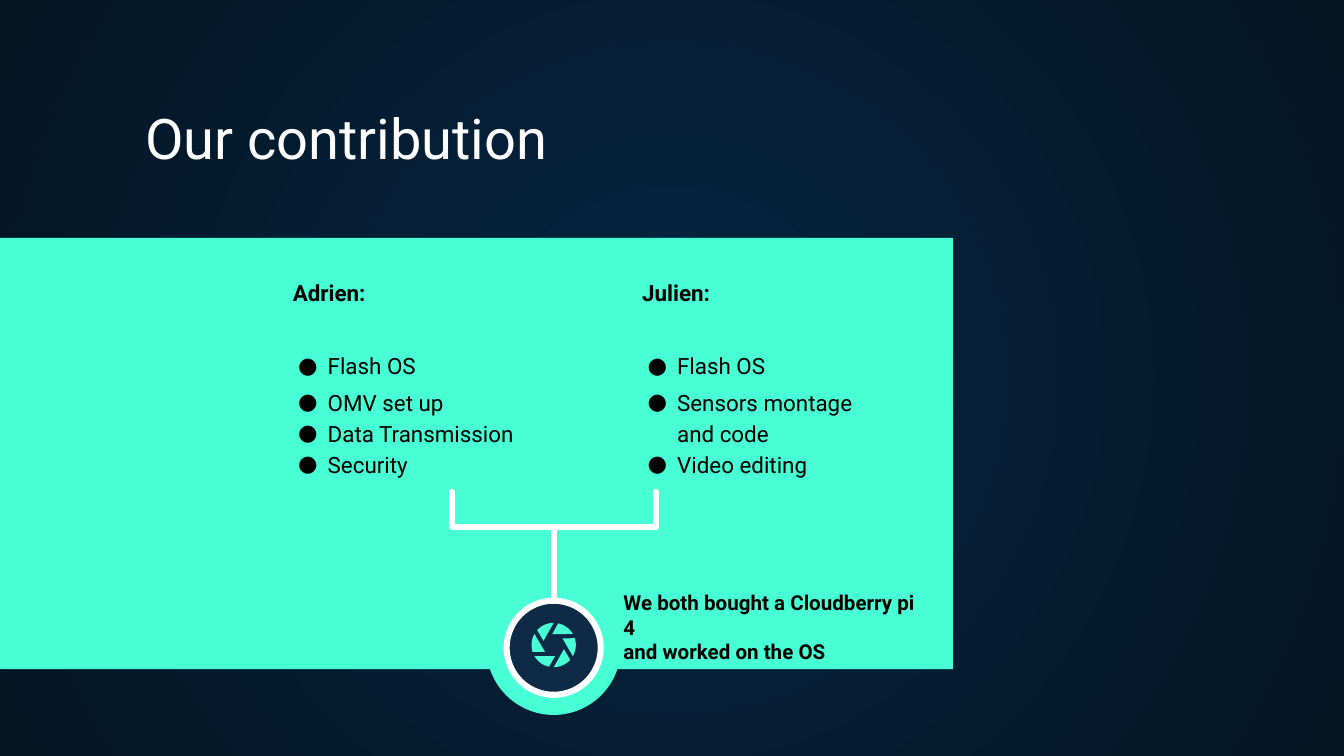
import math

import pptx
import pptx.dml.color
import pptx.enum.shapes
import pptx.enum.text
import pptx.oxml
import pptx.oxml.ns
import pptx.util
from pptx.util import Inches, Pt

RGBColor = pptx.dml.color.RGBColor
Shape = pptx.enum.shapes.MSO_SHAPE
Anchor = pptx.enum.text.MSO_ANCHOR
qn = pptx.oxml.ns.qn

# Content
TITLE = "Our contribution"
CONTRIBUTORS = [
    ("Adrien:", ["Flash OS", "OMV set up", "Data Transmission", "Security"]),
    ("Julien:", ["Flash OS", "Sensors montage and code", "Video editing"]),
]
SHARED_WORK = ["We both bought a Cloudberry pi 4", "and worked on the OS"]

# Style
FONT = "Roboto"
NIGHT = RGBColor(0x05, 0x26, 0x43)
DEEP_NIGHT = RGBColor(0x04, 0x15, 0x23)
NAVY = RGBColor(0x0E, 0x2A, 0x47)
MINT = RGBColor(0x48, 0xFF, 0xD5)
WHITE = RGBColor(0xFF, 0xFF, 0xFF)
BLACK = RGBColor(0, 0, 0)
LINE_WIDTH = Pt(3.25)

# Layout, in inches
COLUMN_LEFT, COLUMN_STEP = 2.08, 2.6
HUB_X, HUB_Y = 4.12, 4.82
APERTURE_Y, APERTURE_RADIUS, BLADES = 4.8, 0.165, 6
BRACKET_HALF, BRACKET_TOP, BRACKET_BOTTOM = 0.76, 3.66, 3.92


def set_font(paragraph, size, color, bold=False):
    paragraph.font.name = FONT
    paragraph.font.size = Pt(size)
    paragraph.font.bold = bold
    paragraph.font.color.rgb = color


def prepare_frame(frame, anchor=Anchor.TOP):
    frame.word_wrap = True
    frame.auto_size = pptx.enum.text.MSO_AUTO_SIZE.NONE
    frame.vertical_anchor = anchor
    frame.margin_left = frame.margin_right = Inches(0.1)
    frame.margin_top = frame.margin_bottom = Inches(0.1)


def add_text_box(left, top, width, height):
    frame = slide.shapes.add_textbox(
        Inches(left), Inches(top), Inches(width), Inches(height)).text_frame
    prepare_frame(frame)
    return frame


def add_bullet(paragraph):
    properties = paragraph._p.get_or_add_pPr()
    properties.set("marL", str(Inches(0.26)))
    properties.set("indent", str(Inches(-0.22)))
    color = pptx.oxml.parse_xml(
        f'<a:buClr {pptx.oxml.ns.nsdecls("a")}><a:srgbClr val="{BLACK}"/></a:buClr>')
    properties.append(color)
    properties.append(properties.makeelement(qn("a:buFont"), {"typeface": FONT}))
    properties.append(properties.makeelement(qn("a:buChar"), {"char": "●"}))


def add_solid(kind, left, top, width, height, color):
    shape = slide.shapes.add_shape(
        kind, Inches(left), Inches(top), Inches(width), Inches(height))
    shape.shadow.inherit = False
    shape.fill.solid()
    shape.fill.fore_color.rgb = color
    shape.line.fill.background()
    return shape


def add_disc(radius, color):
    return add_solid(Shape.OVAL, HUB_X - radius, HUB_Y - radius,
                     2 * radius, 2 * radius, color)


def add_outline(shapes, points, close):
    points = [(Inches(x), Inches(y)) for x, y in points]
    builder = shapes.build_freeform(*points[0])
    builder.add_line_segments(points[1:], close=close)
    outline = builder.convert_to_shape()
    outline.shadow.inherit = False
    return outline


def draw_line(line):
    line.color.rgb = WHITE
    line.width = LINE_WIDTH
    line._get_or_add_ln().set("cap", "rnd")


presentation = pptx.Presentation()
presentation.slide_width = Inches(10)
presentation.slide_height = Inches(10) * 9 // 16
slide = presentation.slides.add_slide(presentation.slide_layouts[5])

# Radial background
background = slide.background.fill
background.gradient()
for stop, color in zip(background.gradient_stops, (NIGHT, DEEP_NIGHT)):
    stop.color.rgb = color
linear = slide.element.find(".//" + qn("a:lin"))
linear.getparent().replace(linear, pptx.oxml.parse_xml(
    f'<a:path {pptx.oxml.ns.nsdecls("a")} path="circle">'
    '<a:fillToRect l="50000" t="50000" r="50000" b="50000"/></a:path>'))

# Panel
add_solid(Shape.RECTANGLE, -0.38, 1.77, 7.47, 3.21, MINT)

# Title
title = slide.shapes.title
title.left, title.top = Inches(0.98), Inches(0.71)
title.width, title.height = Inches(8.68), Inches(0.66)
title.text_frame.text = TITLE
prepare_frame(title.text_frame, Anchor.BOTTOM)
heading = title.text_frame.paragraphs[0]
heading.alignment = pptx.enum.text.PP_ALIGN.LEFT
set_font(heading, 30, WHITE)

# Contributor columns
for column, (name, tasks) in enumerate(CONTRIBUTORS):
    frame = add_text_box(COLUMN_LEFT + column * COLUMN_STEP, 1.98, 2.05, 3.74)
    frame.text = name
    set_font(frame.paragraphs[0], 12, BLACK, bold=True)
    for row, task in enumerate(tasks):
        item = frame.add_paragraph()
        item.text = task
        item.line_spacing = 1.15
        item.space_before = Pt((22.5, 3)[row] if row < 2 else 0)
        add_bullet(item)
        set_font(item, 12, BLACK)

# Bracket joining both columns to the hub
bracket = add_outline(slide.shapes, [
    (HUB_X - BRACKET_HALF, BRACKET_TOP), (HUB_X - BRACKET_HALF, BRACKET_BOTTOM),
    (HUB_X + BRACKET_HALF, BRACKET_BOTTOM), (HUB_X + BRACKET_HALF, BRACKET_TOP),
], close=False)
bracket.fill.background()
draw_line(bracket.line)

# Hub and stem
add_disc(0.5, MINT)
stem = slide.shapes.add_connector(
    pptx.enum.shapes.MSO_CONNECTOR.STRAIGHT,
    Inches(HUB_X), Inches(BRACKET_BOTTOM), Inches(HUB_X), Inches(HUB_Y))
draw_line(stem.line)
stem_properties = stem._element.spPr
stem_properties.append(stem_properties.makeelement(qn("a:effectLst"), {}))
draw_line(add_disc(0.35, NAVY).line)

# Aperture: one blade, turned in equal steps
aperture = slide.shapes.add_group_shape()
inner_corner = (math.hypot(0.065, 0.05), math.degrees(math.atan2(-0.05, 0.065)))
rim = [(APERTURE_RADIUS, angle) for angle in range(-18, 31, 6)]
for blade in range(BLADES):
    turn = blade * 360 / BLADES
    points = [(HUB_X + radius * math.cos(math.radians(angle + turn)),
               APERTURE_Y + radius * math.sin(math.radians(angle + turn)))
              for radius, angle in [inner_corner] + rim]
    leaf = add_outline(aperture.shapes, points, close=True)
    leaf.fill.solid()
    leaf.fill.fore_color.rgb = MINT
    leaf.line.fill.background()

# Shared work
caption = add_text_box(4.54, 4.29, 2.44, 0.6)
caption.text = "\n".join(SHARED_WORK)
for paragraph in caption.paragraphs:
    set_font(paragraph, 11, BLACK, bold=True)

presentation.save("out.pptx")
